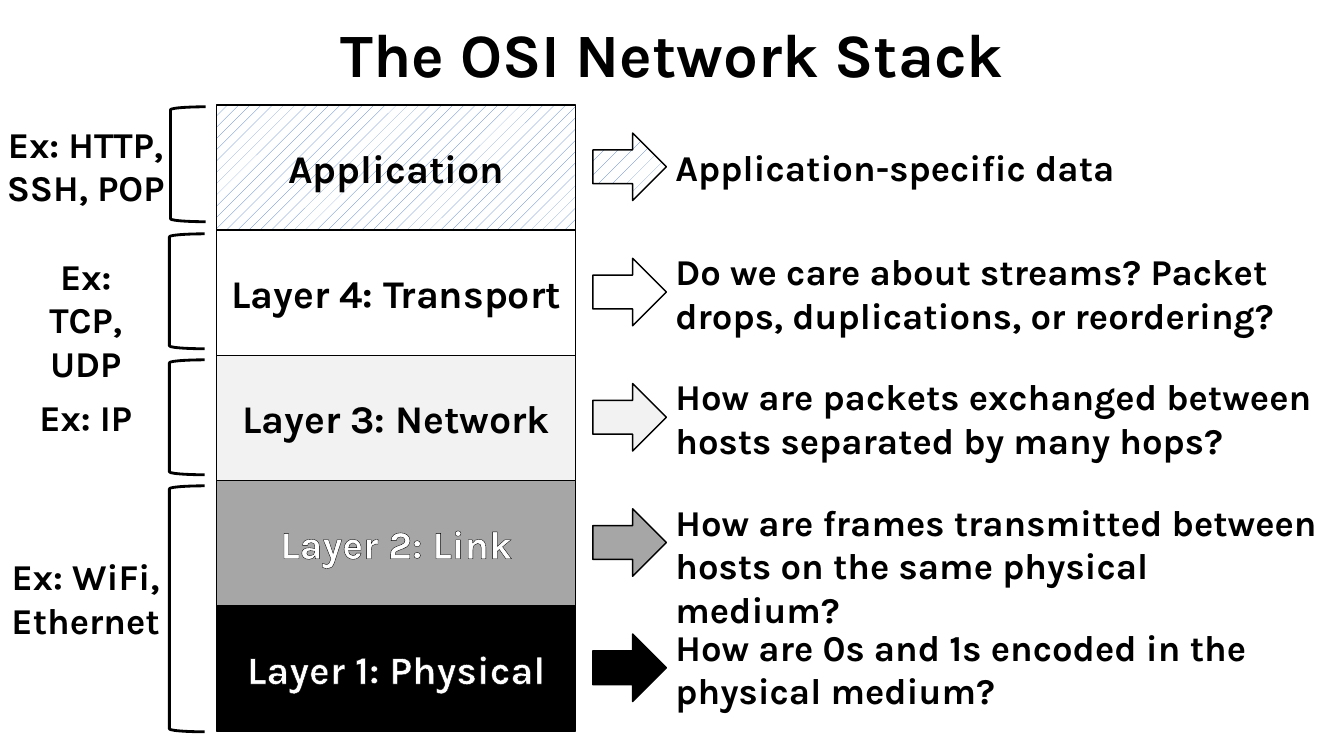
"""Build the OSI network stack slide: layers, their questions and example protocols."""
from dataclasses import dataclass

from lxml import etree
from pptx import Presentation
from pptx import util as u
from pptx.dml.color import RGBColor
from pptx.enum import dml, shapes, text
from pptx.oxml.ns import qn


@dataclass(frozen=True)
class Theme:
    font: str = "Karla"
    black: str = "000000"
    white: str = "FFFFFF"
    light: str = "F2F2F2"
    gray: str = "A6A6A6"
    blue: str = "4472C4"
    title: int = 44
    layer: int = 28
    note: int = 26


T = Theme()
DOTS = dml.MSO_PATTERN
TOP, PITCH = 1.04, 4.97 / 4

LAYERS = [
    ("Application", DOTS.PERCENT_10, DOTS.PERCENT_5, T.black,
     "Application-specific data", 0.35, 0.54, 6.58),
    ("Layer 4: Transport", T.white, T.white, T.black,
     "Do we care about streams? Packet drops, duplications, or reordering?", 0.14, 0.98, 6.74),
    ("Layer 3: Network", T.light, T.light, T.black,
     "How are packets exchanged between hosts separated by many hops?", 0.14, 0.98, 6.58),
    ("Layer 2: Link", T.gray, T.gray, T.white,
     "How are frames transmitted between hosts on the same physical medium?", 0.14, 0.98, 6.58),
    ("Layer 1: Physical", T.black, T.black, T.white,
     "How are 0s and 1s encoded in the physical medium?", 0.14, 0.98, 6.58),
]

EXAMPLES = [
    ("Ex: WiFi,\nEthernet", (1.68, 4.82, 0.35, 2.44), (-0.06, 5.45, 1.82, 0.98)),
    ("Ex: IP", (1.68, 3.57, 0.35, 1.14), (0.11, 3.87, 1.48, 0.54)),
    ("Ex: TCP,\nUDP", (1.68, 2.32, 0.35, 1.14), (0.11, 2.47, 1.48, 0.98)),
    ("Ex: HTTP,\nSSH, POP", (1.69, 1.06, 0.35, 1.14), (-0.06, 1.16, 1.82, 0.98)),
]


class Deck:
    def __init__(self, theme):
        self.theme = theme
        self.prs = Presentation()
        self.prs.slide_width, self.prs.slide_height = u.Inches(13.33), u.Inches(7.5)
        self.s = self.prs.slides.add_slide(self.prs.slide_layouts[5])

    def set_text(self, sp, words, size, color, align):
        tf = sp.text_frame
        tf.text = words
        tf.word_wrap = True
        for p in tf.paragraphs:
            p.alignment = align
            for r in p.runs:
                r.font.name, r.font.size, r.font.bold = self.theme.font, u.Pt(size), True
                r.font.color.rgb = RGBColor.from_string(color)
        return tf

    def title(self, box, words):
        sp = self.s.shapes.title
        sp.left, sp.top, sp.width, sp.height = map(u.Inches, box)
        tf = self.set_text(sp, words, self.theme.title, self.theme.black, text.PP_ALIGN.CENTER)
        tf.auto_size = text.MSO_AUTO_SIZE.NONE
        tf.vertical_anchor = text.MSO_ANCHOR.MIDDLE
        tf.paragraphs[0].line_spacing = 0.9

    def shape(self, kind, box, fill=None, weight=1):
        sp = self.s.shapes.add_shape(kind, *map(u.Inches, box))
        sp.shadow.inherit = False
        sp.line.color.rgb = RGBColor.from_string(self.theme.black)
        sp.line.width = u.Pt(weight)
        if fill is None:
            sp.fill.background()
        elif isinstance(fill, DOTS):
            sp.fill.patterned()
            sp.fill.pattern = fill
            sp.fill.fore_color.rgb = RGBColor.from_string(self.theme.blue)
            sp.fill.back_color.rgb = RGBColor.from_string(self.theme.white)
        else:
            sp.fill.solid()
            sp.fill.fore_color.rgb = RGBColor.from_string(fill)
        return sp

    def layer(self, box, words, fill, color):
        sp = self.shape(shapes.MSO_SHAPE.RECTANGLE, box, fill)
        tf = self.set_text(sp, words, self.theme.layer, color, text.PP_ALIGN.CENTER)
        tf.vertical_anchor = text.MSO_ANCHOR.MIDDLE
        if color == self.theme.white:
            self.outline(tf.paragraphs[0].runs[0])

    def outline(self, r):
        ln = etree.Element(qn("a:ln"), w=str(u.Pt(0.75)))
        solid = etree.SubElement(ln, qn("a:solidFill"))
        etree.SubElement(solid, qn("a:srgbClr"), val=self.theme.black)
        r._r.get_or_add_rPr().insert(0, ln)

    def note(self, box, words, align=text.PP_ALIGN.LEFT):
        sp = self.s.shapes.add_textbox(*map(u.Inches, box))
        tf = self.set_text(sp, words, self.theme.note, self.theme.black, align)
        tf.auto_size = text.MSO_AUTO_SIZE.SHAPE_TO_FIT_TEXT
        return sp

    def group(self, *members):
        self.s.shapes.add_group_shape(members)


def main():
    deck = Deck(T)
    deck.title((0.92, 0.06, 11.5, 1.03), "The OSI Network Stack")
    rows = [(TOP + i * PITCH, *layer) for i, layer in enumerate(LAYERS)][::-1]
    for top, name, fill, _, color, *_ in rows:
        deck.layer((2.15, top, 3.56, PITCH), name, fill, color)
    for top, _, _, fill, _, question, drop, height, width in rows:
        deck.group(
            deck.shape(shapes.MSO_SHAPE.RIGHT_ARROW, (5.88, top + 0.28, 0.73, 0.67), fill),
            deck.note((6.6, top + drop, width, height), question))
    for words, bracket, box in EXAMPLES:
        deck.group(
            deck.shape(shapes.MSO_SHAPE.LEFT_BRACKET, bracket, weight=2),
            deck.note(box, words, text.PP_ALIGN.CENTER))
    deck.prs.save("out.pptx")


if __name__ == "__main__":
    main()
